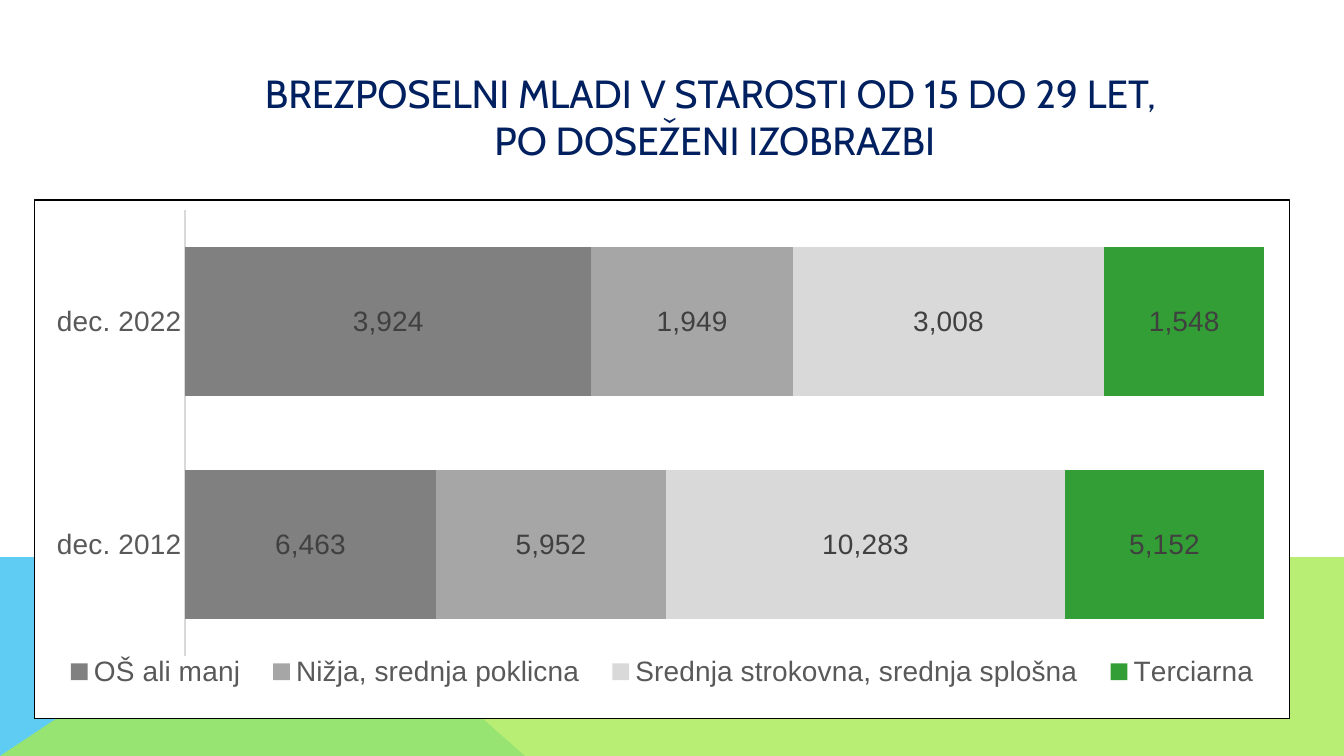
from lxml import etree
from pptx import Presentation
from pptx.chart.data import CategoryChartData
from pptx.dml.color import RGBColor
from pptx.enum.chart import (XL_CHART_TYPE, XL_LABEL_POSITION,
                             XL_LEGEND_POSITION, XL_TICK_LABEL_POSITION,
                             XL_TICK_MARK)
from pptx.enum.text import MSO_ANCHOR, MSO_AUTO_SIZE, PP_ALIGN
from pptx.oxml import parse_xml
from pptx.oxml.ns import qn
from pptx.util import Pt

STACKED = XL_CHART_TYPE.BAR_STACKED_100
CENTER = XL_LABEL_POSITION.CENTER
BOTTOM = XL_LEGEND_POSITION.BOTTOM
NO_TEXT = XL_TICK_LABEL_POSITION.NONE
NO_TICK = XL_TICK_MARK.NONE
MIDDLE = MSO_ANCHOR.MIDDLE
NO_FIT = MSO_AUTO_SIZE.NONE
MID = PP_ALIGN.CENTER

BLACK = RGBColor(0x00, 0x00, 0x00)
NAVY = RGBColor(0x00, 0x20, 0x60)
BLUE = RGBColor(0x5E, 0xCC, 0xF3)
LIME = RGBColor(0xA7, 0xEA, 0x52)
TEXT = RGBColor(0x59, 0x59, 0x59)
LABEL = RGBColor(0x40, 0x40, 0x40)
DARK = RGBColor(0x80, 0x80, 0x80)
GREY = RGBColor(0xA6, 0xA6, 0xA6)
LIGHT = RGBColor(0xD9, 0xD9, 0xD9)
GREEN = RGBColor(0x33, 0x9E, 0x35)

WIDTH, HEIGHT = 960, 540
TITLE = ["BREZPOSELNI MLADI V STAROSTI OD 15 DO 29 LET, ",
         "PO DOSEŽENI IZOBRAZBI"]
YEARS = ["dec. 2012", "dec. 2022"]
LEVELS = [
    ("OŠ ali manj", (6463, 3924), DARK),
    ("Nižja, srednja poklicna", (5952, 1949), GREY),
    ("Srednja strokovna, srednja splošna", (10283, 3008), LIGHT),
    ("Terciarna", (5152, 1548), GREEN),
]
FRAME = (
    '<c:spPr xmlns:c="http://schemas.openxmlformats.org/drawingml/2006/chart"'
    ' xmlns:a="http://schemas.openxmlformats.org/drawingml/2006/main">'
    '<a:solidFill><a:srgbClr val="FFFFFF"/></a:solidFill>'
    '<a:ln w="9525"><a:solidFill><a:srgbClr val="000000"/></a:solidFill>'
    '</a:ln></c:spPr>')


def style(font, size, color, face="Arial"):
    font.size = Pt(size)
    font.name = face
    font.color.rgb = color


def add_area(slide, points, color, alpha=None):
    pen = slide.shapes.build_freeform(*points[0], scale=Pt(1))
    pen.add_line_segments(points[1:], close=True)
    area = pen.convert_to_shape()
    area.shadow.inherit = False
    area.line.fill.background()
    area.fill.solid()
    area.fill.fore_color.rgb = color
    if alpha:
        tint = area.fill._xPr.find(qn("a:solidFill"))[0]
        etree.SubElement(tint, qn("a:alpha")).set("val", str(alpha * 1000))


def add_base(slide, left, top, width, height):
    """Coloured band at the foot of the slide."""
    right, low = left + width, top + height
    peak = left + 214
    add_area(slide, [(left, low), (left, top), (peak, top),
                     (left + 375, low)], BLUE)
    add_area(slide, [(left, low), (peak, top), (right, top),
                     (right, low)], LIME, 80)


def add_title(slide, left, top, width, height):
    title = slide.shapes.title
    title.left, title.top = Pt(left), Pt(top)
    title.width, title.height = Pt(width), Pt(height)
    frame = title.text_frame
    frame.word_wrap = True
    frame.auto_size = NO_FIT
    frame.vertical_anchor = MIDDLE
    for i, line in enumerate(TITLE):
        para = frame.add_paragraph() if i else frame.paragraphs[0]
        para.alignment = MID
        para.line_spacing = 1.0
        para.space_before = Pt(0)
        run = para.add_run()
        run.text = line
        style(run.font, 28, NAVY, "Cabin")


def make_layout(x, y, w, h, inner=False):
    """Manual layout, as shares of the chart's box."""
    layout = etree.Element(qn("c:layout"))
    manual = etree.SubElement(layout, qn("c:manualLayout"))
    parts = [("layoutTarget", "inner")] if inner else []
    parts += [("xMode", "edge"), ("yMode", "edge"),
              ("x", x), ("y", y), ("w", w), ("h", h)]
    for tag, val in parts:
        etree.SubElement(manual, qn("c:" + tag)).set("val", str(val))
    return layout


def set_layout(parent, index, layout):
    for old in parent.findall(qn("c:layout")):
        parent.remove(old)
    parent.insert(index, layout)


def add_bars(slide, left, top, width, height):
    data = CategoryChartData(number_format="#,##0")
    data.categories = YEARS
    for name, vals, _ in LEVELS:
        data.add_series(name, vals)
    chart = slide.shapes.add_chart(STACKED, Pt(left), Pt(top), Pt(width),
                                   Pt(height), data).chart
    chart.has_title = False
    style(chart.font, 10, BLACK)

    # Bars and their values
    plot = chart.plots[0]
    plot.gap_width, plot.overlap = 50, 100
    plot.vary_by_categories = False
    for series, (_, _, color) in zip(plot.series, LEVELS):
        series.format.fill.solid()
        series.format.fill.fore_color.rgb = color
        labels = series.data_labels
        labels.show_value = True
        labels.number_format = "#,##0"
        labels.number_format_is_linked = False
        labels.position = CENTER
        style(labels.font, 20, LABEL)

    # Axes
    years, scale = chart.category_axis, chart.value_axis
    for axis in (years, scale):
        axis.has_major_gridlines = False
        axis.major_tick_mark = axis.minor_tick_mark = NO_TICK
    style(years.tick_labels.font, 20, TEXT)
    years.format.line.color.rgb = LIGHT
    years.format.line.width = Pt(1.5)
    scale.tick_label_position = NO_TEXT
    scale.format.line.fill.background()

    # Legend
    chart.has_legend = True
    legend = chart.legend
    legend.position = BOTTOM
    legend.include_in_layout = False
    style(legend.font, 20, TEXT)

    # Frame and placing
    space = chart._chartSpace
    body = space.find(qn("c:chart"))
    body.addnext(parse_xml(FRAME))
    set_layout(body.find(qn("c:plotArea")), 0,
               make_layout(0.12, 0.02, 0.86, 0.86, inner=True))
    set_layout(body.find(qn("c:legend")), 1,
               make_layout(0.01, 0.87, 0.98, 0.08))


def main():
    prs = Presentation()
    prs.slide_width, prs.slide_height = Pt(WIDTH), Pt(HEIGHT)
    slide = prs.slides.add_slide(prs.slide_layouts[5])
    add_base(slide, 0, 397.5, WIDTH, HEIGHT - 397.5)
    add_title(slide, 168, 41, 685, 84)
    add_bars(slide, 24.5, 142.5, 897, 371)
    prs.save("out.pptx")


if __name__ == "__main__":
    main()
